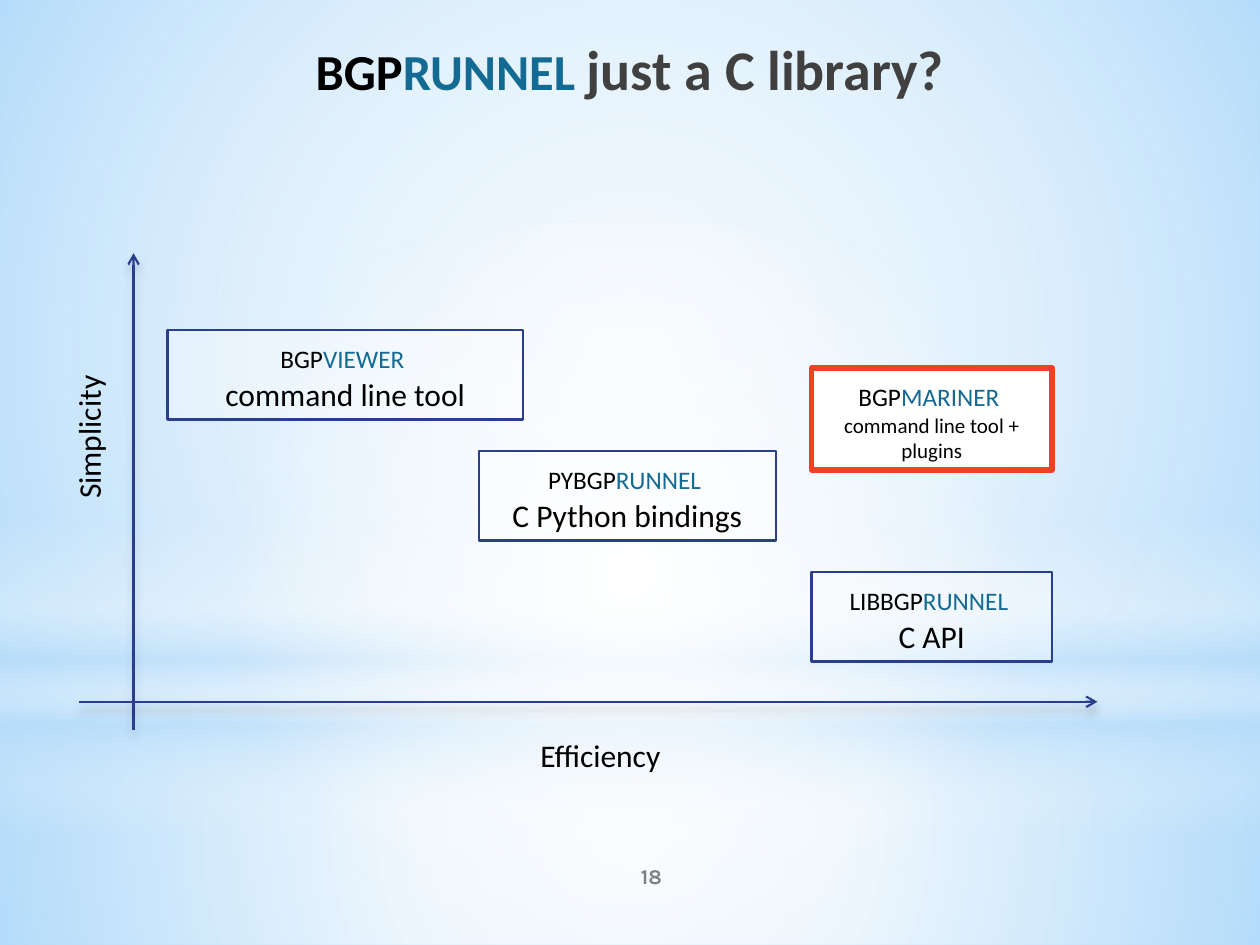
from pptx import Presentation
from pptx.dml.color import RGBColor
from pptx.enum.shapes import MSO_CONNECTOR as LINE, MSO_SHAPE as SHAPE
from pptx.enum.text import MSO_ANCHOR as ANCHOR, PP_ALIGN as ALIGN
from pptx.oxml import parse_xml
from pptx.oxml.ns import nsdecls, qn
from pptx.util import Inches, Pt
from lxml.etree import SubElement

HUES = {"white": "FFFFFF", "sky": "B4DCFA", "black": "000000", "teal": "136A93",
        "dark": "404040", "gray": "808080", "navy": "2A3E8E", "red": "F14124"}


def rgb(hue):
    return RGBColor.from_string(HUES[hue])


def place(shape, *area):
    shape.left, shape.top, shape.width, shape.height = map(Inches, area)


def write(para, runs, font="Calibri"):
    """Fill a centred paragraph with runs of (text, size, hue, bold, small caps)."""
    para.alignment = ALIGN.CENTER
    for text, size, hue, bold, small in runs:
        run = para.add_run()
        run.text = text
        run.font.name, run.font.size, run.font.bold = font, Pt(size), bold
        run.font.color.rgb = rgb(hue)
        run._r.get_or_add_rPr().set("cap", "small" if small else "none")


def add_shape(slide, kind, area):
    shape = slide.shapes.add_shape(kind, *map(Inches, area))
    shape.shadow.inherit = False
    return shape


def add_glow(slide, kind, area, stops, round_path=True):
    """Add a backdrop shape whose stops are (position %, hue, opacity %)."""
    shape = add_shape(slide, kind, area)
    shape.line.fill.background()
    shape.fill.background()
    marks = "".join(
        f'<a:gs pos="{pos * 1000}"><a:srgbClr val="{HUES[hue]}">'
        f'<a:alpha val="{alpha * 1000}"/></a:srgbClr></a:gs>'
        for pos, hue, alpha in stops)
    way = ('<a:path path="circle"><a:fillToRect l="50000" t="50000" r="50000" b="50000"/></a:path>'
           if round_path else '<a:lin ang="5400000" scaled="0"/>')
    grad = parse_xml(f'<a:gradFill {nsdecls("a")} rotWithShape="1">'
                     f'<a:gsLst>{marks}</a:gsLst>{way}</a:gradFill>')
    props = shape._element.spPr
    props.replace(props.find(qn("a:noFill")), grad)


def add_backdrop(slide):
    slide.background.fill.solid()
    slide.background.fill.fore_color.rgb = rgb("sky")
    add_glow(slide, SHAPE.RECTANGLE, (0, 5.58, 10, 1.92),
             [(0, "white", 91), (37, "white", 76), (100, "sky", 79)])
    add_glow(slide, SHAPE.RECTANGLE, (0, 0, 10, 5.58),
             [(0, "white", 89), (48, "white", 62), (100, "sky", 79)])
    add_glow(slide, SHAPE.RECTANGLE, (0, 4.12, 10, 2.5),
             [(0, "white", 0), (29, "white", 30), (45, "sky", 40),
              (55, "white", 26), (65, "sky", 60), (100, "white", 0)], False)
    add_glow(slide, SHAPE.OVAL, (0, 1.75, 10, 5.58),
             [(0, "white", 100), (56, "white", 0)])


def add_title(slide):
    title = slide.shapes.title
    slide.shapes._spTree.append(title._element)  # in front of the backdrop
    place(title, 0.5, 0.17, 9, 0.79)
    title.text_frame.vertical_anchor = ANCHOR.TOP
    write(title.text_frame.paragraphs[0],
          [("bgp", 36, "black", True, True), ("runnel ", 36, "teal", True, True),
           ("just a C library?", 32, "dark", True, False)])


def add_label(slide, text, area, size=18, hue="black", font="Calibri", bold=False, turn=0):
    label = slide.shapes.add_textbox(*map(Inches, area))
    label.rotation = turn
    frame = label.text_frame
    frame.word_wrap = False
    frame.vertical_anchor = ANCHOR.MIDDLE
    write(frame.paragraphs[0], [(text, size, hue, bold, False)], font)


def add_tool(slide, area, start, end, note, size=18, edge="navy", width=1.25, alpha=36):
    box = add_shape(slide, SHAPE.RECTANGLE, area)
    box.fill.solid()
    box.fill.fore_color.rgb = rgb("white")
    color = box._element.spPr.find(qn("a:solidFill"))[0]
    SubElement(color, qn("a:alpha")).set("val", str(alpha * 1000))
    box.line.color.rgb = rgb(edge)
    box.line.width = Pt(width)
    frame = box.text_frame
    frame.word_wrap = True
    frame.vertical_anchor = ANCHOR.MIDDLE
    write(frame.paragraphs[0], [(start, 18, "black", False, True),
                                (end + " ", 18, "teal", False, True)])
    write(frame.add_paragraph(), [(note, size, "black", False, False)])


def add_axis(slide, *ends):
    axis = slide.shapes.add_connector(LINE.STRAIGHT, *map(Inches, ends))
    axis.line.color.rgb = rgb("navy")
    axis.line.width = Pt(1.25)
    SubElement(axis.line._get_or_add_ln(), qn("a:tailEnd")).set("type", "arrow")
    axis._element.spPr.append(parse_xml(
        f'<a:effectLst {nsdecls("a")}><a:outerShdw blurRad="{Pt(5)}" dist="{Pt(4)}" '
        f'dir="5400000" rotWithShape="0"><a:srgbClr val="{HUES["black"]}">'
        '<a:alpha val="20000"/></a:srgbClr></a:outerShdw></a:effectLst>'))


def main():
    deck = Presentation()
    deck.slide_width, deck.slide_height = Inches(10), Inches(7.5)
    slide = deck.slides.add_slide(deck.slide_layouts[5])
    add_backdrop(slide)
    add_title(slide)
    add_label(slide, "18", (4.17, 6.75, 2, 0.4), 12, "gray", "Karla", True)
    add_tool(slide, (6.44, 4.54, 1.91, 0.71), "libbgp", "runnel", "C API")
    add_tool(slide, (3.8, 3.58, 2.36, 0.71), "pybgp", "runnel", "C Python bindings")
    add_tool(slide, (1.33, 2.62, 2.82, 0.71), "bgp", "viewer", "command line tool")
    add_label(slide, "Efficiency", (4.13, 5.79, 1.27, 0.4))
    add_label(slide, "Simplicity", (0.06, 3.27, 1.28, 0.4), turn=270)
    add_axis(slide, 1.06, 5.79, 1.06, 2.01)
    add_axis(slide, 0.63, 5.57, 8.71, 5.57)
    add_tool(slide, (6.44, 2.92, 1.91, 0.81), "bgp", "mariner",
             "command line tool + plugins", 12, "red", 3, 100)
    deck.save("out.pptx")


if __name__ == "__main__":
    main()
